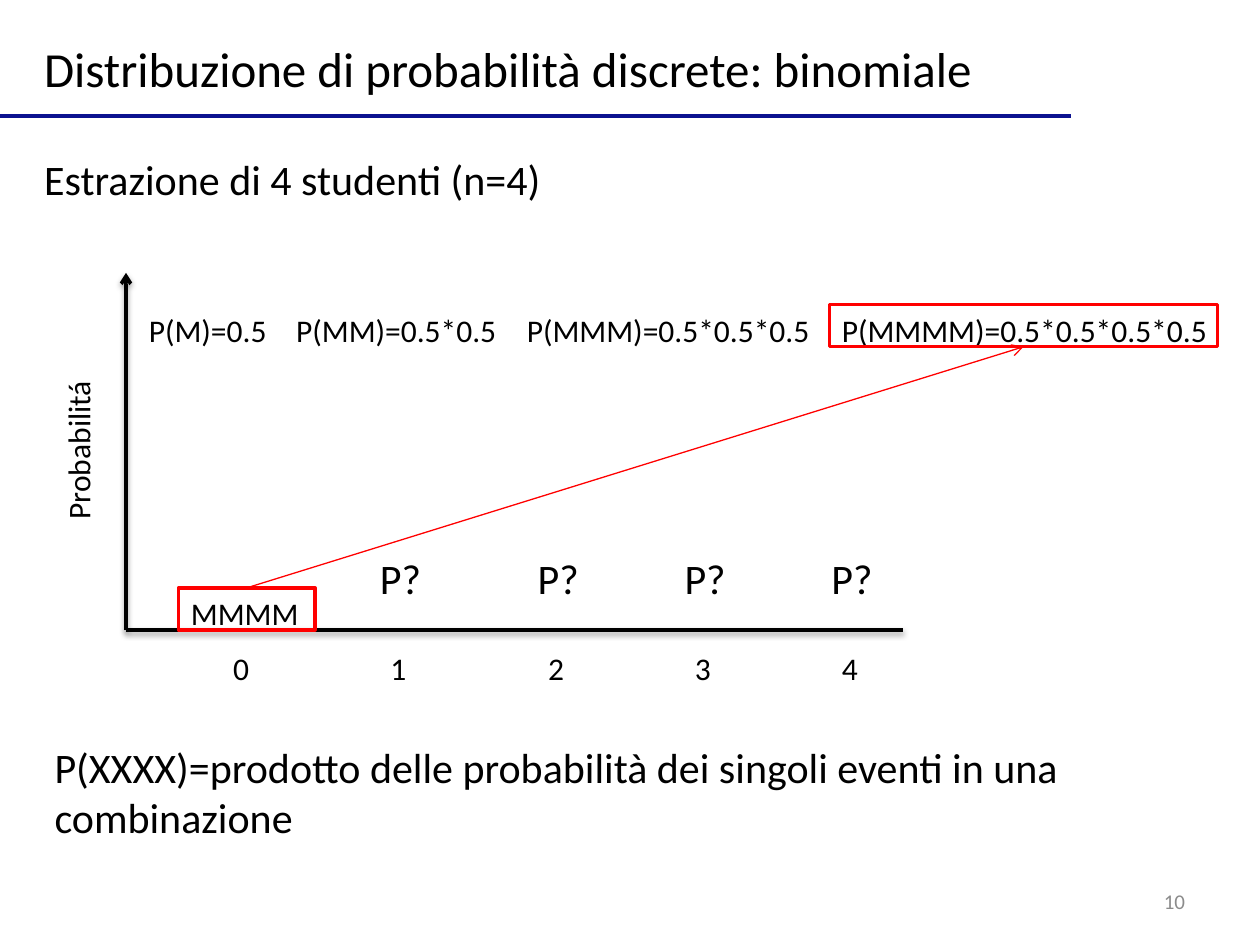
from lxml.etree import SubElement
from pptx import Presentation
from pptx.dml.color import RGBColor
from pptx.enum.shapes import MSO_CONNECTOR, MSO_SHAPE
from pptx.enum.text import MSO_ANCHOR, MSO_AUTO_SIZE, PP_ALIGN
from pptx.oxml.ns import qn
from pptx.util import Cm, Pt

BLACK = RGBColor(0x00, 0x00, 0x00)
GREY = RGBColor(0x8C, 0x8C, 0x8C)
NAVY = RGBColor(0x0C, 0x12, 0x90)
RED = RGBColor(0xFF, 0x00, 0x00)

LINE_HEIGHT = 1.01
FRAME_HEIGHT = 0.85
TICK_LEFTS = (1.91, 5.08, 8.26, 11.22, 14.18)
PRODUCTS = (
    (0.21, 3.81, "P(M)=0.5"),
    (3.18, 5.5, "P(MM)=0.5*0.5"),
    (7.83, 6.56, "P(MMM)=0.5*0.5*0.5"),
    (14.18, 8.04, "P(MMMM)=0.5*0.5*0.5*0.5"),
)


def add_text(page, text, left, top, width, height, size=18, color=BLACK,
             align=PP_ALIGN.LEFT, **frame_format):
    box = page.shapes.add_textbox(Cm(left), Cm(top), Cm(width), Cm(height))
    settings = {"word_wrap": True, "auto_size": MSO_AUTO_SIZE.SHAPE_TO_FIT_TEXT}
    for name, value in (settings | frame_format).items():
        setattr(box.text_frame, name, value)
    para = box.text_frame.paragraphs[0]
    para.alignment = align
    span = para.add_run()
    span.text = text
    for name, value in {"name": "Calibri", "size": Pt(size)}.items():
        setattr(span.font, name, value)
    span.font.color.rgb = color
    return box


def add_line(page, start, end, color, weight, arrow=False, shadow=False):
    line = page.shapes.add_connector(
        MSO_CONNECTOR.STRAIGHT, *(Cm(value) for value in (*start, *end)))
    line.line.color.rgb = color
    line.line.width = Pt(weight)
    if arrow:
        SubElement(line.line._get_or_add_ln(), qn("a:tailEnd"), type="arrow")
    effects = SubElement(line._element.spPr, qn("a:effectLst"))
    if shadow:
        outer = SubElement(effects, qn("a:outerShdw"), blurRad="40000",
                           dist="20000", dir="5400000", rotWithShape="0")
        tint = SubElement(outer, qn("a:srgbClr"), val="000000")
        SubElement(tint, qn("a:alpha"), val="38000")
    return line


def add_frame(page, left, top, width):
    frame = page.shapes.add_shape(
        MSO_SHAPE.RECTANGLE, Cm(left), Cm(top), Cm(width), Cm(FRAME_HEIGHT))
    frame.shadow.inherit = False
    frame.fill.background()
    frame.line.color.rgb = RED
    frame.line.width = Pt(2)
    return frame


def add_heading(page, left, top, width):
    add_text(page, "Distribuzione di probabilità discrete: binomiale",
             left, top, 19.4, 1.45, size=28, word_wrap=False,
             vertical_anchor=MSO_ANCHOR.MIDDLE)
    rule_y = top + 1.7
    add_line(page, (0, rule_y), (21.59, rule_y), NAVY, 2)
    add_text(page, "Estrazione di 4 studenti (n=4)",
             left, top + 2.33, width, 1.27, size=24)


def add_probability_plot(page, left, top, width, height):
    """Draw the axes in the given box, with the labels set around its origin."""
    bottom = top + height
    add_line(page, (left, bottom), (left, top), BLACK, 2, arrow=True, shadow=True)
    add_line(page, (left, bottom), (left + width, bottom), BLACK, 2, shadow=True)
    label = add_text(page, "Probabilitá", left - 4.57, top + 3.07, 7.2,
                     LINE_HEIGHT, align=PP_ALIGN.CENTER)
    label.rotation = 270

    for count, offset in enumerate(TICK_LEFTS):
        x = left + offset
        add_text(page, str(count), x, bottom + 0.25, 1.06, LINE_HEIGHT)
        if count:
            add_text(page, "P?", x - 0.21, bottom - 1.69, 1.69, 1.27, size=24)

    row_top = top + 0.64
    for offset, text_width, text in PRODUCTS:
        add_text(page, text, left + offset, row_top, text_width, LINE_HEIGHT)

    outcome_left, outcome_top = left + 1.06, bottom - FRAME_HEIGHT
    add_text(page, "MMMM", outcome_left, outcome_top, 2.75, LINE_HEIGHT)
    outcome = add_frame(page, outcome_left, outcome_top, 2.75)
    product = add_frame(page, left + PRODUCTS[-1][0], row_top, 7.83)
    link = add_line(page, (0, 0), (1, 1), RED, 0.75, arrow=True)
    link.begin_connect(outcome, 0)
    link.end_connect(product, 2)


def add_footer(page, left, top, width):
    add_text(page, "P(XXXX)=prodotto delle probabilità dei singoli eventi in una "
             "combinazione", left, top, width, 2.31, size=24)
    add_text(page, "10", left + 17.36, top + 2.84, 5.93, LINE_HEIGHT, size=12,
             color=GREY, align=PP_ALIGN.RIGHT, auto_size=MSO_AUTO_SIZE.NONE,
             vertical_anchor=MSO_ANCHOR.MIDDLE)


def main():
    deck = Presentation()
    deck.slide_width, deck.slide_height = Cm(25.4), Cm(19.05)
    page = deck.slides.add_slide(deck.slide_layouts[6])
    add_heading(page, 0.64, 0.64, 23.5)
    add_probability_plot(page, 2.54, 5.5, 15.67, 7.2)
    add_footer(page, 0.85, 14.82, 24.13)
    deck.save("out.pptx")


if __name__ == "__main__":
    main()
